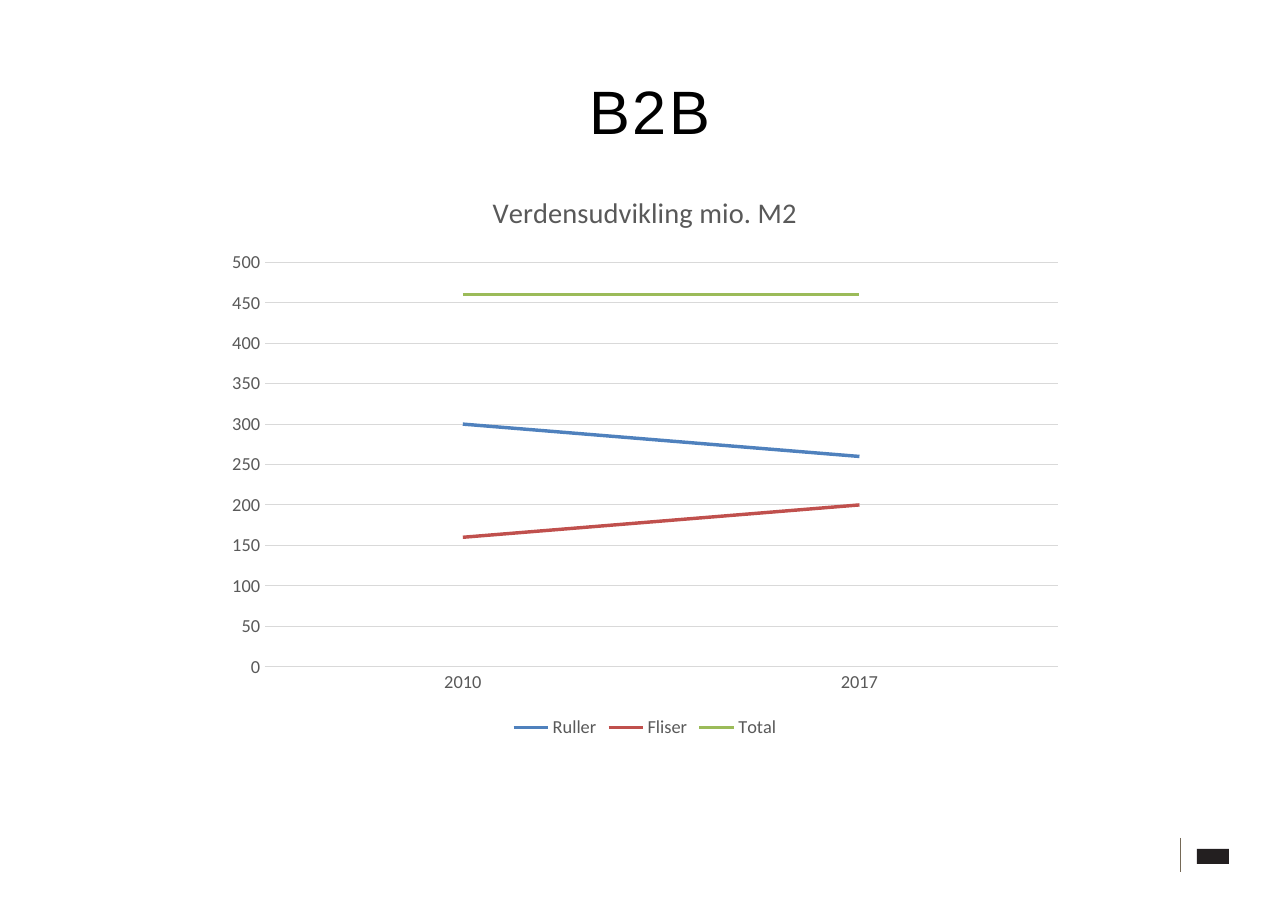
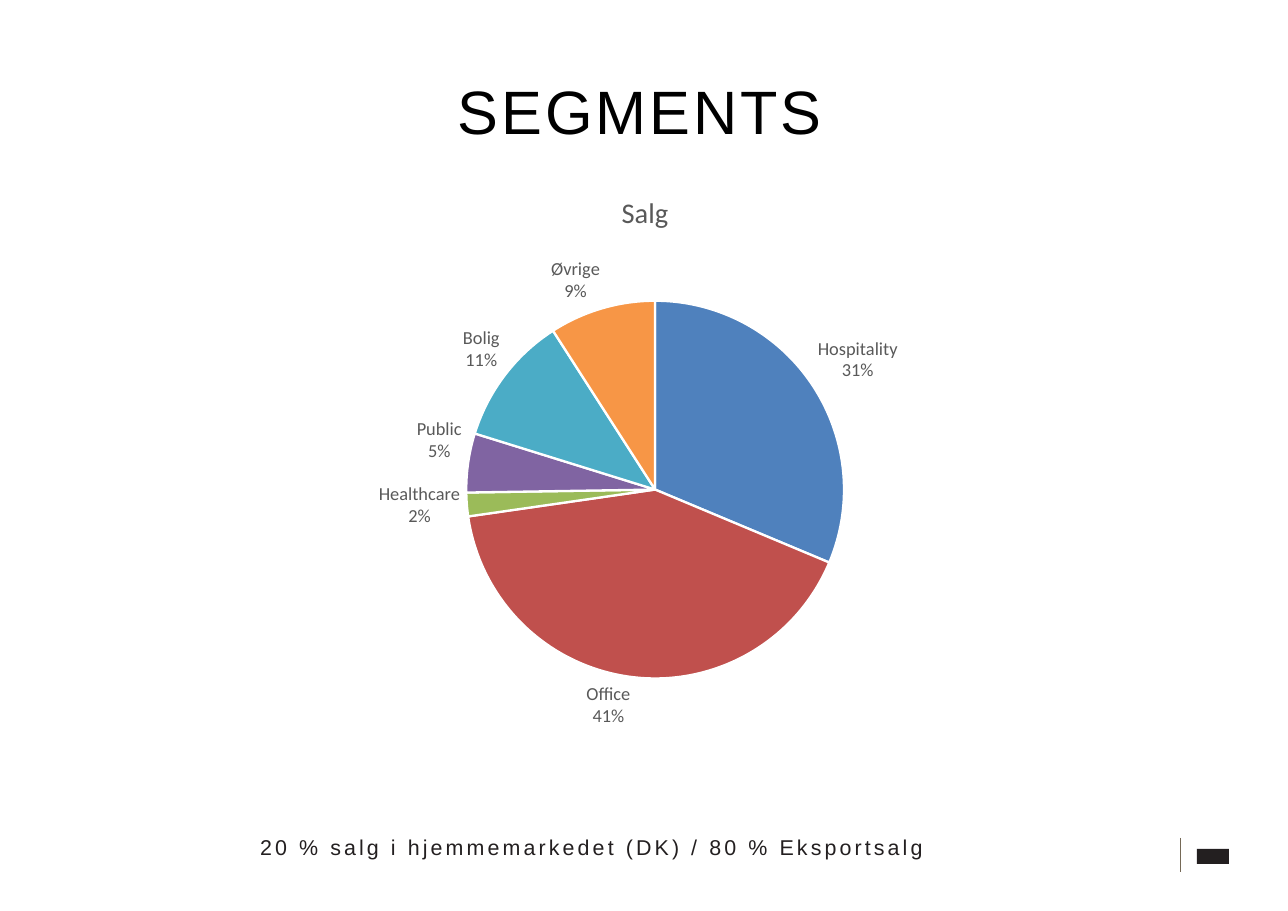
from dataclasses import dataclass

from lxml.etree import SubElement
from pptx import Presentation
from pptx.chart.data import CategoryChartData
from pptx.dml.color import RGBColor
from pptx.enum.chart import XL_CHART_TYPE, XL_LABEL_POSITION, XL_LEGEND_POSITION, XL_TICK_MARK
from pptx.enum.shapes import MSO_CONNECTOR, MSO_SHAPE
from pptx.enum.text import PP_ALIGN
from pptx.oxml.ns import qn
from pptx.util import Emu, Pt

SCALE = 914400 / 110.2


def px(count):
    """Turn whole pixels into EMU."""
    return Emu(round(count * SCALE))


def tint(code):
    """Turn a hex code into a colour."""
    return RGBColor.from_string(code)


@dataclass(frozen=True)
class Theme:
    """Colours, fonts and type sizes of the deck."""
    black: str = "000000"
    ink: str = "231F20"
    grey: str = "595959"
    grid: str = "D9D9D9"
    rule: str = "756956"
    white: str = "FFFFFF"
    hues: tuple = ("4F81BD", "C0504D", "9BBB59", "8064A2", "4BACC6", "F79646")
    face: str = "Arial"
    plain: str = "Calibri"
    title: float = 40
    note: float = 14
    head: float = 18.6
    label: float = 12
    track: int = 200


class Deck:
    """Slides in one style, with a method for each kind of element."""

    def __init__(self, theme):
        """Open an empty deck."""
        self.theme = theme
        self.file = Presentation()
        self.file.slide_width, self.file.slide_height = px(1288), px(911)
        self.slide = None

    def page(self, title):
        """Start a slide with its title and corner mark."""
        self.slide = self.file.slides.add_slide(self.file.slide_layouts[6])
        self.text((112, 73, 1076, 74), title, self.theme.title, self.theme.black, PP_ALIGN.CENTER)
        self.line((1180, 838), (1180, 872))
        self.block((1197, 849, 32, 15))

    def text(self, box, words, size, hue, align=PP_ALIGN.LEFT, lead=None):
        """Add a text box with one tracked run."""
        frame = self.slide.shapes.add_textbox(*map(px, box)).text_frame
        frame.word_wrap = True
        frame.margin_left = frame.margin_right = frame.margin_top = frame.margin_bottom = 0
        para = frame.paragraphs[0]
        para.alignment = align
        if lead:
            para.line_spacing = Pt(lead)
        run = para.add_run()
        run.text = words
        self.font(run.font, size, hue, self.theme.face)
        run._r.get_or_add_rPr().set("spc", str(self.theme.track))

    def font(self, font, size, hue, face):
        """Style a font."""
        font.size, font.name, font.bold = Pt(size), face, False
        font.color.rgb = tint(hue)

    def line(self, start, end):
        """Add a thin rule."""
        rule = self.slide.shapes.add_connector(MSO_CONNECTOR.STRAIGHT, *map(px, start + end))
        self.stroke(rule.line, self.theme.rule, 0.25)
        SubElement(rule._element.spPr, qn("a:effectLst"))

    def block(self, box):
        """Add a plain dark block."""
        shape = self.slide.shapes.add_shape(MSO_SHAPE.RECTANGLE, *map(px, box))
        shape.shadow.inherit = False
        shape.fill.solid()
        shape.fill.fore_color.rgb = tint(self.theme.ink)
        shape.line.fill.background()

    def stroke(self, line, hue, width):
        """Style a line."""
        line.color.rgb = tint(hue)
        line.width = Pt(width)

    def chart(self, kind, title, names, rows):
        """Add a titled chart and return it."""
        data = CategoryChartData()
        data.categories = names
        for name, vals in rows:
            data.add_series(name, vals)
        box = map(px, (215, 170, 860, 573))
        chart = self.slide.shapes.add_chart(kind, *box, data).chart
        self.font(chart.font, self.theme.label, self.theme.grey, self.theme.plain)
        chart.has_title, chart.has_legend = True, False
        run = chart.chart_title.text_frame.paragraphs[0].add_run()
        run.text = title
        self.font(run.font, self.theme.head, self.theme.grey, self.theme.plain)
        chart.chart_title.include_in_layout = False
        return chart

    def trend(self, title, names, rows, top, step):
        """Add a line chart with a legend below."""
        chart = self.chart(XL_CHART_TYPE.LINE, title, names, rows)
        chart.has_legend = True
        chart.legend.position = XL_LEGEND_POSITION.BOTTOM
        chart.legend.include_in_layout = False
        chart.plots[0].vary_by_categories = False
        for row, hue in zip(chart.plots[0].series, self.theme.hues):
            row.smooth = False
            self.stroke(row.format.line, hue, 2.25)
        base, side = chart.category_axis, chart.value_axis
        for axis in (base, side):
            axis.major_tick_mark = axis.minor_tick_mark = XL_TICK_MARK.NONE
        self.stroke(base.format.line, self.theme.grid, 0.75)
        side.format.line.fill.background()
        side.minimum_scale, side.maximum_scale, side.major_unit = 0, top, step
        side.has_major_gridlines = True
        self.stroke(side.major_gridlines.format.line, self.theme.grid, 0.75)

    def pie(self, title, parts):
        """Add a pie with names and shares outside."""
        chart = self.chart(XL_CHART_TYPE.PIE, title, list(parts), [(title, list(parts.values()))])
        chart.plots[0].vary_by_categories = True
        row = chart.plots[0].series[0]
        for spot, hue in zip(range(len(parts)), self.theme.hues):
            form = row.points[spot].format
            form.fill.solid()
            form.fill.fore_color.rgb = tint(hue)
            self.stroke(form.line, self.theme.white, 1.5)
        tags = row.data_labels
        self.font(tags.font, self.theme.label, self.theme.grey, self.theme.plain)
        tags.number_format, tags.number_format_is_linked = "0%", False
        tags.position = XL_LABEL_POSITION.OUTSIDE_END
        tags.show_value = False
        tags.show_category_name = tags.show_percentage = True
        root = tags._element
        split = SubElement(root, qn("c:separator"))
        split.text = "\n"
        root.find(qn("c:showBubbleSize")).addnext(split)


def main():
    """Build and save the deck."""
    theme = Theme()
    deck = Deck(theme)
    deck.page("B2B")
    deck.trend(
        "Verdensudvikling mio. M2",
        ["2010", "2017"],
        [("Ruller", (300, 260)), ("Fliser", (160, 200)), ("Total", (460, 460))],
        500, 50,
    )
    deck.page("SEGMENTS ")
    deck.pie("Salg", {
        "Hospitality": 31, "Office": 41, "Healthcare": 2,
        "Public": 5, "Bolig": 11, "Øvrige": 9,
    })
    deck.text(
        (260, 787, 889, 61), "20 % salg i hjemmemarkedet (DK) / 80 % Eksportsalg",
        theme.note, theme.ink, lead=47.5,
    )
    deck.file.save("out.pptx")


if __name__ == "__main__":
    main()
